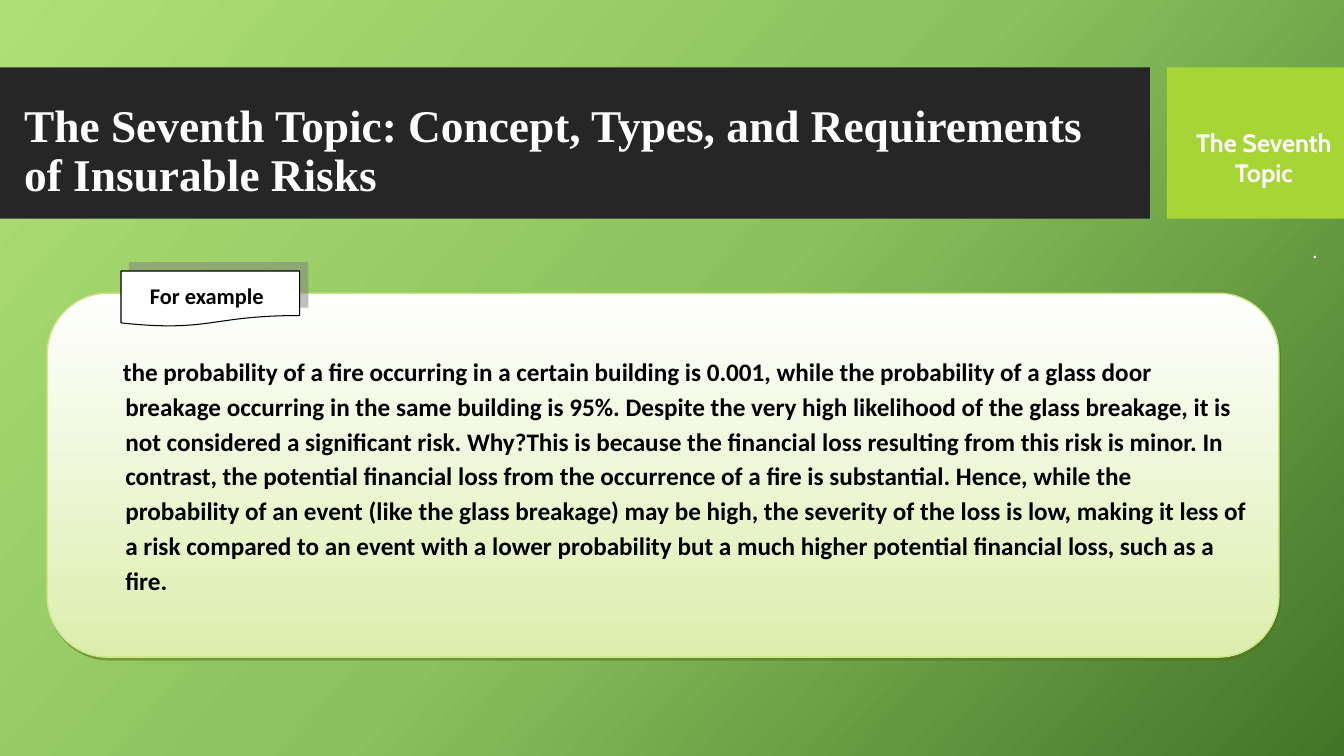
from lxml import etree
from pptx import Presentation
from pptx.dml.color import RGBColor
from pptx.enum import shapes, text
from pptx.oxml.ns import qn
from pptx.util import Cm, Pt

TITLE = ["The Seventh Topic: Concept, Types, and Requirements of Insurable Risks"]
TOPIC = ["The Seventh", "Topic"]
DOT = ["."]
TAG = ["For example"]
EXAMPLE = [
    "the probability of a fire occurring in a certain building is 0.001, while the "
    "probability of a glass door breakage occurring in the same building is 95%. "
    "Despite the very high likelihood of the glass breakage, it is not considered a "
    "significant risk. Why?This is because the financial loss resulting from this risk "
    "is minor. In contrast, the potential financial loss from the occurrence of a fire "
    "is substantial. Hence, while the probability of an event (like the glass breakage) "
    "may be high, the severity of the loss is low, making it less of a risk compared to "
    "an event with a lower probability but a much higher potential financial loss, such "
    "as a fire."
]

THEME = {
    "white": "FFFFFF", "black": "000000", "bar": "262626", "badge": "A7D535",
    "card_line": "CAE686", "card_shadow": "556E17", "tag_shadow": "808080",
    "backdrop": [(0, "AFDE77"), (50, "8BC25D"), (100, "437528")],
    "card": [(0, "FFFFFF"), (100, "DCEEAE")],
    "title_size": 32.4, "body_size": 18, "tag_size": 16,
    "title_font": "Times New Roman", "label_font": "Cabin", "body_font": "Calibri",
}

# Left, top, width, height in centimetres
BAR = (0, 1.7, 28.98, 3.81)
BADGE = (29.41, 1.7, 4.46, 3.81)
TITLE_BOX = (0.36, 2.17, 27.58, 3.33)
TOPIC_BOX = (29.7, 3.07, 4.3, 1.8)
DOT_BOX = (0, 5.74, 33.45, 4.11)
CARD = (1.19, 7.39, 31.04, 9.17)
TAG_BOX = (3.05, 6.83, 4.5, 1.4)


def rgb(name):
    return RGBColor.from_string(THEME[name])


def add_color(parent, value):
    return etree.SubElement(parent, qn("a:srgbClr"), val=value)


def gradient(fill, root, stops, angle):
    fill.gradient()
    stop_list = next(root.iter(qn("a:gsLst")))
    for old in list(stop_list):
        stop_list.remove(old)
    for position, value in stops:
        add_color(etree.SubElement(stop_list, qn("a:gs"), pos=str(position * 1000)), value)
    line = next(root.iter(qn("a:lin")))
    line.set("ang", str(angle * 60000))
    line.set("scaled", "0")


def cast_shadow(shape, name, distance, direction):
    effects = next(shape._element.iter(qn("a:effectLst")))
    outer = etree.SubElement(effects, qn("a:outerShdw"), blurRad="0",
                             dist=str(Pt(distance)), dir=str(direction * 60000),
                             algn="ctr", rotWithShape="0")
    etree.SubElement(add_color(outer, THEME[name]), qn("a:alpha"), val="50000")


def add_panel(kind, place, fill=None, line=None, weight=1):
    panel = slide.shapes.add_shape(kind, *map(Cm, place))
    panel.shadow.inherit = False
    if fill:
        panel.fill.solid()
        panel.fill.fore_color.rgb = rgb(fill)
    if line:
        panel.line.color.rgb = rgb(line)
        panel.line.width = Pt(weight)
    else:
        panel.line.fill.background()
    return panel


def write(shape, lines, font, size, color, bold=True, align="LEFT", anchor="TOP",
          spacing=1.0, indent=None, top=0.13):
    frame = shape.text_frame
    for key, value in {"word_wrap": True, "vertical_anchor": text.MSO_ANCHOR[anchor],
                       "margin_top": Cm(top)}.items():
        setattr(frame, key, value)
    for number, line in enumerate(lines):
        paragraph = frame.add_paragraph() if number else frame.paragraphs[0]
        paragraph.alignment = text.PP_ALIGN[align]
        paragraph.line_spacing = spacing
        if indent:
            left, first = indent
            properties = paragraph._p.get_or_add_pPr()
            properties.set("marL", str(Cm(left)))
            properties.set("indent", str(Cm(first)))
        run = paragraph.add_run()
        run.text = line
        for key, value in {"name": THEME[font], "size": Pt(THEME[size]), "bold": bold}.items():
            setattr(run.font, key, value)
        run.font.color.rgb = rgb(color)


def add_text(place, *content, **format_values):
    write(slide.shapes.add_textbox(*map(Cm, place)), *content, **format_values)


# Slide and backdrop
deck = Presentation()
deck.slide_width, deck.slide_height = Cm(33.87), Cm(19.05)
slide = deck.slides.add_slide(deck.slide_layouts[6])
gradient(slide.background.fill, slide._element, THEME["backdrop"], 42)

# Title bar and topic badge
kinds = shapes.MSO_SHAPE
add_panel(kinds.RECTANGLE, BAR, "bar")
add_panel(kinds.RECTANGLE, BADGE, "badge")
add_text(TITLE_BOX, TITLE, "title_font", "title_size", "white", anchor="MIDDLE", spacing=0.9)
add_text(TOPIC_BOX, TOPIC, "label_font", "body_size", "white", align="CENTER")
add_text(DOT_BOX, DOT, "label_font", "body_size", "white", bold=False, align="RIGHT")

# Example card
card = add_panel(kinds.ROUNDED_RECTANGLE, CARD, line="card_line")
card.adjustments[0] = 0.167
gradient(card.fill, card._element, THEME["card"], 90)
cast_shadow(card, "card_shadow", 2.2, 63)
write(card, EXAMPLE, "body_font", "body_size", "black", spacing=1.15,
      indent=(1.27, -0.06), top=1.03)

# Tag on the card
tag = add_panel(kinds.FLOWCHART_DOCUMENT, TAG_BOX, "white", "black", 0.75)
cast_shadow(tag, "tag_shadow", 8.5, 315)
write(tag, TAG, "body_font", "tag_size", "black", anchor="MIDDLE", spacing=1.15,
      indent=(0.48, 0))

deck.save("out.pptx")
